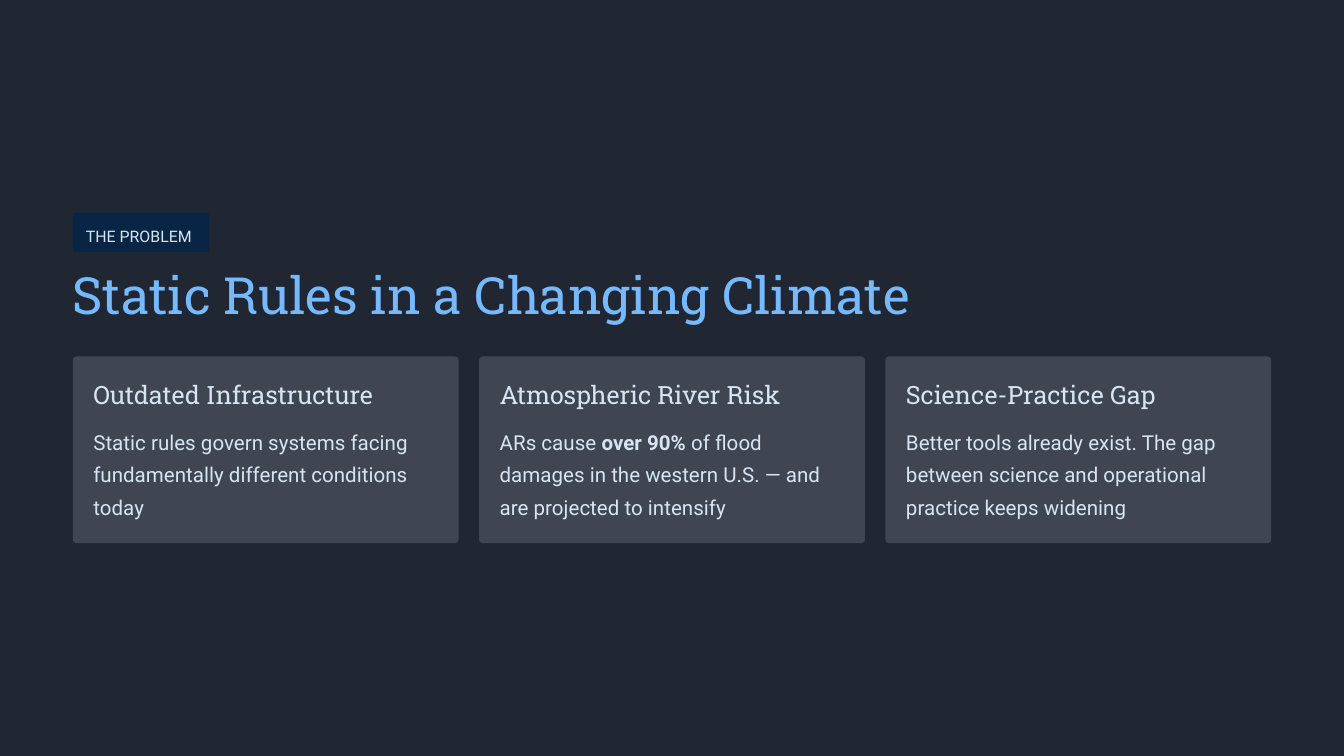
from pptx import Presentation
from pptx import util as u
from pptx.dml.color import RGBColor
from pptx.enum import shapes, text

Pt = u.Pt

NIGHT = RGBColor(0x20, 0x27, 0x33)
NAVY = RGBColor(0x08, 0x25, 0x45)
SLATE = RGBColor(0x3F, 0x46, 0x52)
MIST = RGBColor(0xD6, 0xE5, 0xEF)
SKY = RGBColor(0x76, 0xB9, 0xFF)

SANS = "Roboto"
SLAB = "Roboto Slab"

SLIDE_WIDTH, SLIDE_HEIGHT = 720, 405
MARGIN = 39
GAP = 11
PADDING = 11
CARD_TOP, CARD_HEIGHT = 191, 100
CARD_WIDTH = round((SLIDE_WIDTH - 2 * MARGIN - 2 * GAP) / 3, 2)

CARDS = [
    ("Outdated Infrastructure", 155,
     [("Static rules govern systems facing fundamentally different conditions today", False)]),
    ("Atmospheric River Risk", 156,
     [("ARs cause ", False),
      ("over 90%", True),
      (" of flood damages in the western U.S. — and are projected to intensify", False)]),
    ("Science-Practice Gap", 140,
     [("Better tools already exist. The gap between science and operational "
       "practice keeps widening", False)]),
]


def write(frame, runs, font, size, color, spacing, wrap=False):
    frame.margin_left = frame.margin_right = 0
    frame.margin_top = frame.margin_bottom = 0
    frame.auto_size = text.MSO_AUTO_SIZE.NONE
    frame.vertical_anchor = text.MSO_ANCHOR.TOP
    frame.word_wrap = wrap
    line = frame.paragraphs[0]
    line.alignment = text.PP_ALIGN.LEFT
    line.line_spacing = Pt(spacing)
    line.space_before = Pt(0)
    for words, bold in runs:
        run = line.add_run()
        run.text = words
        run.font.name = font
        run.font.size = Pt(size)
        run.font.bold = bold
        run.font.color.rgb = color


def add_label(slide, box, runs, font, size, spacing, wrap=False):
    label = slide.shapes.add_textbox(*map(Pt, box))
    write(label.text_frame, runs, font, size, MIST, spacing, wrap)


def add_panel(slide, box, fill, rounding):
    panel = slide.shapes.add_shape(
        shapes.MSO_SHAPE.ROUNDED_RECTANGLE, *map(Pt, box))
    panel.adjustments[0] = rounding
    panel.shadow.inherit = False
    panel.fill.solid()
    panel.fill.fore_color.rgb = fill
    panel.line.fill.background()


def add_title(slide, words):
    title = slide.shapes.title
    title.left, title.top = Pt(MARGIN), Pt(139.5)
    title.width, title.height = Pt(455), Pt(34.5)
    write(title.text_frame, [(words, False)], SLAB, 27.5, SKY, 34.5)


def add_tag(slide, words):
    add_panel(slide, (MARGIN, 114, 73, 21), NAVY, 0.06)
    add_label(slide, (MARGIN + 7, 117.5, 60, 14), [(words, False)], SANS, 8.5, 14)


def add_card(slide, left, heading, heading_width, body):
    add_panel(slide, (left, CARD_TOP, CARD_WIDTH, CARD_HEIGHT), SLATE, 0.02)
    inner = left + PADDING
    add_label(slide, (inner, 202.5, heading_width, 17),
              [(heading, False)], SLAB, 13.5, 17)
    add_label(slide, (inner, 226, CARD_WIDTH - 2 * PADDING, 53),
              body, SANS, 11, 17.5, wrap=True)


def main():
    deck = Presentation()
    deck.slide_width, deck.slide_height = Pt(SLIDE_WIDTH), Pt(SLIDE_HEIGHT)
    slide = deck.slides.add_slide(deck.slide_layouts[5])
    slide.background.fill.solid()
    slide.background.fill.fore_color.rgb = NIGHT

    add_tag(slide, "THE PROBLEM")
    add_title(slide, "Static Rules in a Changing Climate")
    for column, (heading, heading_width, body) in enumerate(CARDS):
        left = MARGIN + column * (CARD_WIDTH + GAP)
        add_card(slide, left, heading, heading_width, body)

    deck.save("out.pptx")


if __name__ == "__main__":
    main()
